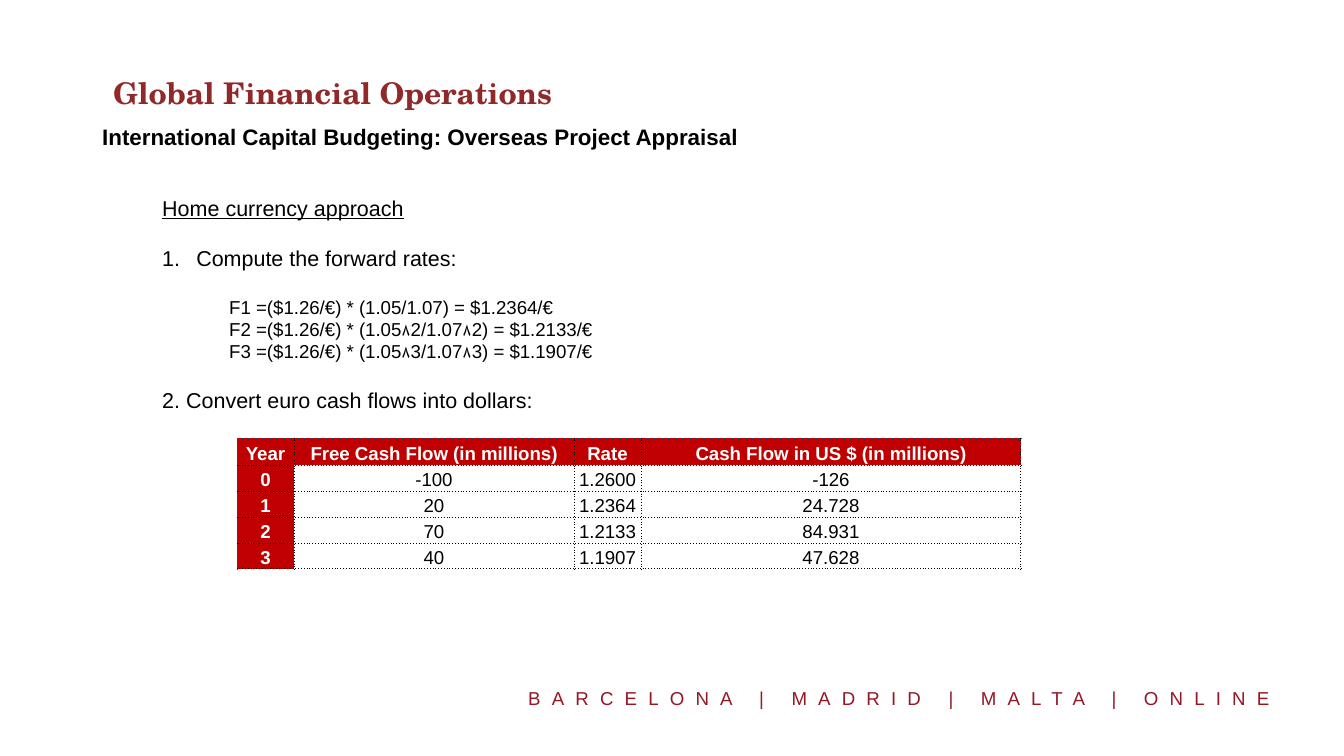
from dataclasses import dataclass

import pptx
import pptx.dml.color
import pptx.enum.text
import pptx.oxml.ns
import pptx.presentation
import pptx.slide
import pptx.util
from lxml import etree

EMU_PER_PX = 914400 / 134.4


@dataclass(frozen=True)
class Theme:
    sans: str = "Arial"
    serif: str = "TeX Gyre Schola"
    text: str = "000000"
    white: str = "FFFFFF"
    title: str = "90292A"
    footer: str = "921824"
    header_fill: str = "C00000"
    outer_border: str = "1F4E78"
    title_size: float = 16
    subtitle_size: float = 12
    body_size: float = 11.5
    small_size: float = 10


THEME = Theme()


@dataclass(frozen=True)
class Line:
    text: str
    size: float = THEME.body_size
    color: str = THEME.text
    font: str = THEME.sans
    bold: bool = False
    underline: bool = False
    tracking: int = 0  # hundredths of a point
    indent: int = 0  # px
    hanging: int = 0  # px
    numbered: bool = False
    before: float = 0
    after: float = 0
    spacing: float = 1.0


@dataclass(frozen=True)
class TextBlock:
    left: int
    top: int
    width: int
    height: int
    lines: tuple[Line, ...]
    wrap: bool = True


def px(length: int) -> pptx.util.Emu:
    return pptx.util.Emu(round(length * EMU_PER_PX))


def rgb(color: str) -> pptx.dml.color.RGBColor:
    return pptx.dml.color.RGBColor.from_string(color)


def add_child(parent, tag: str, **attributes: str):
    return etree.SubElement(parent, pptx.oxml.ns.qn(tag), attributes)


def format_line(paragraph, line: Line) -> None:
    paragraph.text = line.text
    paragraph.line_spacing = line.spacing
    paragraph.space_before = pptx.util.Pt(line.before)
    paragraph.space_after = pptx.util.Pt(line.after)
    properties = paragraph._p.get_or_add_pPr()
    properties.set("marL", str(px(line.indent)))
    properties.set("indent", str(px(-line.hanging)))
    if line.numbered:
        add_child(properties, "a:buAutoNum", type="arabicPeriod")
    for run in paragraph.runs:
        run.font.name = line.font
        run.font.size = pptx.util.Pt(line.size)
        run.font.bold = line.bold
        run.font.underline = line.underline
        run.font.color.rgb = rgb(line.color)
        if line.tracking:
            run.font._element.set("spc", str(line.tracking))


def draw_text(slide: pptx.slide.Slide, block: TextBlock) -> None:
    shape = slide.shapes.add_textbox(
        px(block.left), px(block.top), px(block.width), px(block.height))
    text_frame = shape.text_frame
    text_frame.word_wrap = block.wrap
    for index, line in enumerate(block.lines):
        paragraph = text_frame.paragraphs[0] if index == 0 else text_frame.add_paragraph()
        format_line(paragraph, line)


def set_border(cell, tag: str, color: str) -> None:
    border = add_child(cell._tc.get_or_add_tcPr(), tag, w=str(pptx.util.Pt(0.5)))
    fill = add_child(border, "a:solidFill")
    add_child(fill, "a:srgbClr", val=color)
    add_child(border, "a:prstDash", val="sysDot")


def draw_table(slide: pptx.slide.Slide, left: int, top: int, widths: list[int],
               heights: list[int], rows: list[tuple[str, ...]]) -> None:
    frame = slide.shapes.add_table(
        len(rows), len(widths), px(left), px(top), px(sum(widths)), px(sum(heights)))
    table = frame.table
    table.first_row = False
    table.horz_banding = False
    for column, width in zip(table.columns, widths):
        column.width = px(width)
    for table_row, height in zip(table.rows, heights):
        table_row.height = px(height)

    for row, values in enumerate(rows):
        for column, value in enumerate(values):
            cell = table.cell(row, column)
            is_header = row == 0 or column == 0
            cell.margin_left = cell.margin_right = 0
            cell.margin_top = cell.margin_bottom = 0
            cell.vertical_anchor = pptx.enum.text.MSO_ANCHOR.BOTTOM
            set_border(cell, "a:lnL", THEME.outer_border if column == 0 else THEME.text)
            set_border(cell, "a:lnR", THEME.text)
            set_border(cell, "a:lnT", THEME.outer_border if row == 0 else THEME.text)
            set_border(cell, "a:lnB", THEME.text)
            cell.fill.solid()
            cell.fill.fore_color.rgb = rgb(THEME.header_fill if is_header else THEME.white)
            paragraph = cell.text_frame.paragraphs[0]
            format_line(paragraph, Line(
                value, size=THEME.small_size, bold=is_header,
                color=THEME.white if is_header else THEME.text))
            paragraph.alignment = pptx.enum.text.PP_ALIGN.CENTER


# Content
GAP = 13.2  # one body line, in points

FOOTER = TextBlock(515, 680, 792, 36, (
    Line("BARCELONA | MADRID | MALTA | ONLINE", size=THEME.small_size,
         color=THEME.footer, tracking=600),), wrap=False)

FORMULAS = (
    "F1 =($1.26/€) * (1.05/1.07) = $1.2364/€",
    "F2 =($1.26/€) * (1.05٨2/1.07٨2) = $1.2133/€",
    "F3 =($1.26/€) * (1.05٨3/1.07٨3) = $1.1907/€",
)

BODY = TextBlock(149, 188, 945, 316, (
    Line("Home currency approach", underline=True),
    Line("Compute the forward rates:", indent=34, hanging=34, numbered=True, before=GAP),
    *(Line(formula, size=THEME.small_size, indent=67, before=0 if index else GAP)
      for index, formula in enumerate(FORMULAS)),
    Line("2. Convert euro cash flows into dollars:", before=GAP),
))

SUBTITLE = TextBlock(22, 117, 757, 40, (
    Line("International Capital Budgeting: Overseas Project Appraisal",
         size=THEME.subtitle_size, bold=True, indent=67),))

TITLE = TextBlock(100, 66, 1058, 50, (
    Line("Global Financial Operations", size=THEME.title_size, font=THEME.serif,
         color=THEME.title, bold=True, spacing=1.07, after=8),))

CASH_FLOWS = [
    ("Year", "Free Cash Flow (in millions)", "Rate", "Cash Flow in US $ (in millions)"),
    ("0", "-100", "1.2600", "-126"),
    ("1", "20", "1.2364", "24.728"),
    ("2", "70", "1.2133", "84.931"),
    ("3", "40", "1.1907", "47.628"),
]


def main() -> None:
    presentation = pptx.Presentation()
    presentation.slide_width = px(1344)
    presentation.slide_height = px(756)
    slide = presentation.slides.add_slide(presentation.slide_layouts[6])

    # Text and table, from back to front
    draw_text(slide, FOOTER)
    draw_text(slide, BODY)
    draw_table(slide, 237, 438, [57, 280, 67, 380], [27] + [26] * 4, CASH_FLOWS)
    draw_text(slide, SUBTITLE)
    draw_text(slide, TITLE)

    presentation.save("out.pptx")


if __name__ == "__main__":
    main()
